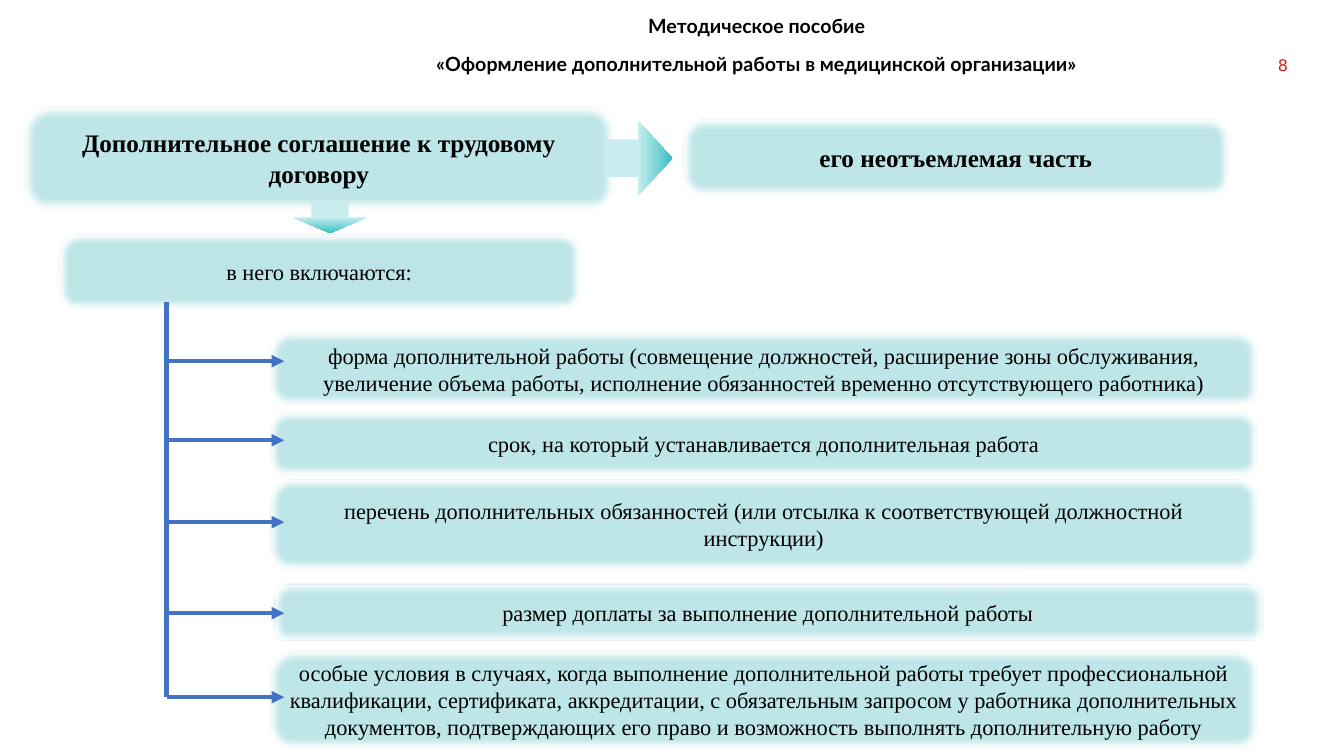
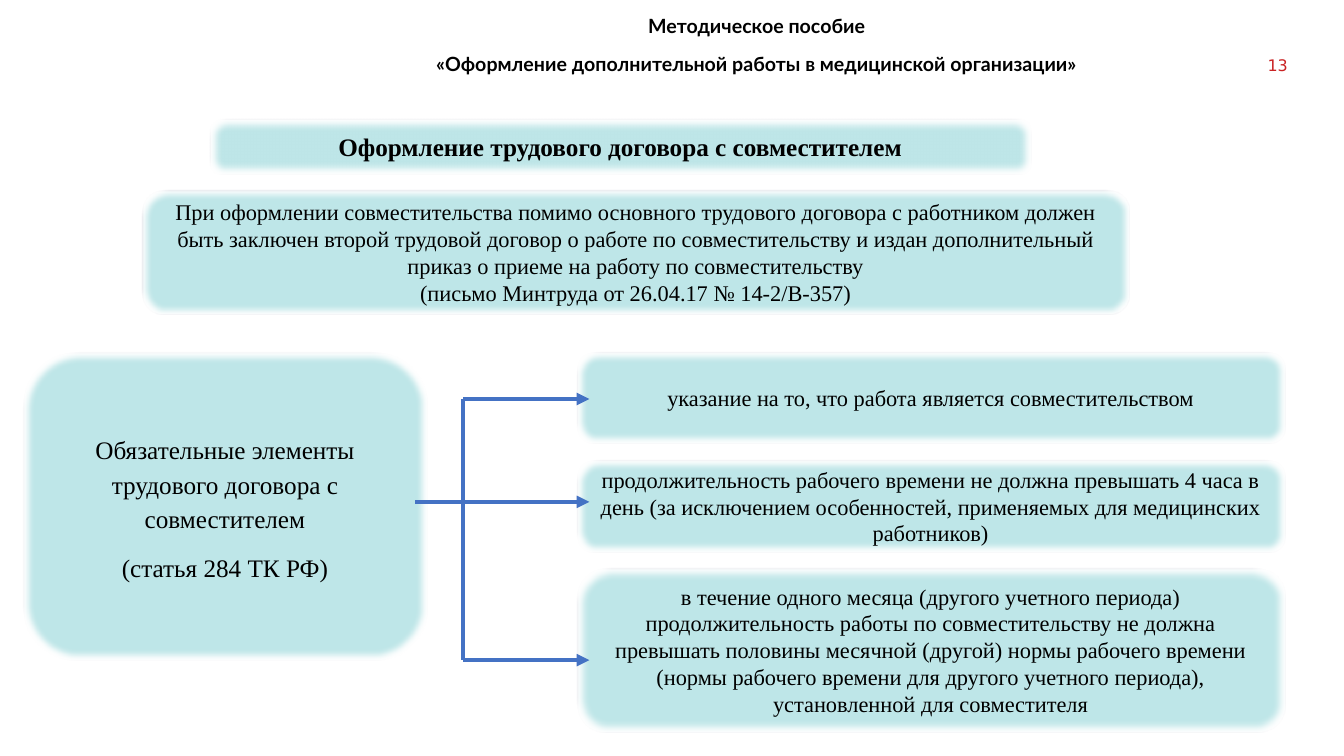
"""Build two slides on documenting additional work in a medical organization."""
from dataclasses import dataclass

from lxml.etree import SubElement
from pptx import Presentation
from pptx.dml.color import RGBColor
from pptx.enum.shapes import MSO_CONNECTOR as Connector, MSO_SHAPE as Shape
from pptx.enum.text import MSO_ANCHOR as Anchor, MSO_AUTO_SIZE as AutoSize, PP_ALIGN as Align
from pptx.oxml.ns import qn
from pptx.util import Pt


@dataclass(frozen=True)
class Theme:
    """Colours, fonts and sizes shared by the slides."""
    black: RGBColor = RGBColor.from_string("000000")
    number_red: RGBColor = RGBColor.from_string("CA2324")
    box_fill: RGBColor = RGBColor.from_string("BEE6E8")
    box_line: RGBColor = RGBColor.from_string("1E3256")
    arrow_light: RGBColor = RGBColor.from_string("C7EDEE")
    arrow_dark: RGBColor = RGBColor.from_string("3BC0C3")
    branch: RGBColor = RGBColor.from_string("4472C4")
    body_font: str = "Times New Roman"
    header_font: str = "Lato"
    number_font: str = "DejaVu Sans"
    heading_size: float = 18
    body_size: float = 16
    header_size: float = 14
    number_size: float = 11.4
    box_line_width: float = 1
    branch_width: float = 3
    soft_edge: float = 5


THEME = Theme()
HEADER = ("Методическое пособие",
          "«Оформление дополнительной работы в медицинской организации»")


def points(*values):
    """Convert numbers to lengths in points."""
    return [Pt(value) for value in values]


def write_text(shape, *lines, size=THEME.body_size, font=THEME.body_font, color=THEME.black,
               bold=False, align=Align.CENTER, anchor=Anchor.MIDDLE, spacing=None, after=0):
    """Fill a shape with one formatted paragraph per line."""
    frame = shape.text_frame
    frame.word_wrap = True
    frame.auto_size = AutoSize.NONE
    frame.vertical_anchor = anchor
    for index, line in enumerate(lines):
        paragraph = frame.add_paragraph() if index else frame.paragraphs[0]
        paragraph.alignment = align
        paragraph.line_spacing = spacing
        paragraph.space_after = Pt(after)
        run = paragraph.add_run()
        run.text = line
        run.font.size = Pt(size)
        run.font.name = font
        run.font.bold = bold
        run.font.color.rgb = color


def add_page(presentation, number):
    """Add a slide with the common header and its page number."""
    slide = presentation.slides.add_slide(presentation.slide_layouts[5])
    title = slide.shapes.title
    title.left, title.top, title.width, title.height = points(222.5, 6.5, 636, 51)
    write_text(title, *HEADER, size=THEME.header_size, font=THEME.header_font, bold=True,
               anchor=Anchor.TOP, after=10)
    page_number = slide.shapes.add_textbox(*points(898, 39.5, 22, 17.5))
    frame = page_number.text_frame
    frame.margin_left = frame.margin_right = frame.margin_top = frame.margin_bottom = 0
    write_text(page_number, str(number), size=THEME.number_size, font=THEME.number_font,
               color=THEME.number_red, align=Align.RIGHT, anchor=Anchor.TOP)
    return slide


def add_box(slide, bounds, *lines, **text_format):
    """Add a rounded box with soft edges and text."""
    box = slide.shapes.add_shape(Shape.ROUNDED_RECTANGLE, *points(*bounds))
    box.fill.solid()
    box.fill.fore_color.rgb = THEME.box_fill
    box.line.color.rgb = THEME.box_line
    box.line.width = Pt(THEME.box_line_width)
    box.shadow.inherit = False
    effects = box._element.spPr.find(qn("a:effectLst"))
    SubElement(effects, qn("a:softEdge"), rad=str(Pt(THEME.soft_edge)))
    write_text(box, *lines, **text_format)


def add_block_arrow(slide, bounds, rotation=0):
    """Add a block arrow that darkens towards its tip."""
    arrow = slide.shapes.add_shape(Shape.DOWN_ARROW, *points(*bounds))
    arrow.rotation = rotation
    arrow.fill.gradient()
    arrow.fill.gradient_angle = 270
    stops = ((0.5, THEME.arrow_light), (1, THEME.arrow_dark))
    for stop, (position, color) in zip(arrow.fill.gradient_stops, stops):
        stop.position = position
        stop.color.rgb = color
    arrow.line.fill.background()
    arrow.shadow.inherit = False


def add_line(slide, start, end, arrowhead=False):
    """Add a straight line, with an arrowhead at its end if wanted."""
    line = slide.shapes.add_connector(Connector.STRAIGHT, *points(*start, *end))
    line.line.color.rgb = THEME.branch
    line.line.width = Pt(THEME.branch_width)
    if arrowhead:
        SubElement(line.line._get_or_add_ln(), qn("a:tailEnd"), type="triangle")
    SubElement(line._element.spPr, qn("a:effectLst"))


def add_branches(slide, trunk_x, tip_x, trunk_top, heights):
    """Add a vertical trunk with an arrow at each height."""
    add_line(slide, (trunk_x, trunk_top), (trunk_x, heights[-1]))
    for height in heights:
        add_line(slide, (trunk_x, height), (tip_x, height), arrowhead=True)


def build_agreement_slide(presentation):
    """Show what the supplementary agreement includes."""
    slide = add_page(presentation, 8)
    heading = {"size": THEME.heading_size, "bold": True}
    add_box(slide, (17.5, 76.5, 420.5, 72.5),
            "Дополнительное соглашение к трудовому договору", **heading)
    add_block_arrow(slide, (429, 88.5, 53.5, 49), rotation=270)
    add_box(slide, (488, 85.5, 389.5, 53.5), "его неотъемлемая часть", **heading)
    add_box(slide, (42, 167, 372, 53.5), "в него включаются:")
    add_block_arrow(slide, (209, 144, 53.5, 22.5))
    terms = (
        (193, 237.5, 52, "форма дополнительной работы (совмещение должностей, расширение зоны "
         "обслуживания, увеличение объема работы, исполнение обязанностей временно "
         "отсутствующего работника)"),
        (193, 294.5, 44.5, "срок, на который устанавливается дополнительная работа"),
        (193, 342.5, 64, "перечень дополнительных обязанностей (или отсылка к "
         "соответствующей должностной инструкции)"),
        (196, 417.5, 39.5, "размер доплаты за выполнение дополнительной работы"),
        (193, 465, 69, "особые условия в случаях, когда выполнение дополнительной работы "
         "требует профессиональной квалификации, сертификата, аккредитации, с обязательным "
         "запросом у работника дополнительных документов, подтверждающих его право и "
         "возможность выполнять дополнительную работу"),
    )
    for left, top, height, text in terms:
        add_box(slide, (left, top, 705, height), text)
    add_branches(slide, 119, 203, 216, (258, 314.5, 373, 438, 498))


def build_contract_slide(presentation):
    """Show the mandatory elements of a part-time contract."""
    slide = add_page(presentation, 13)
    add_box(slide, (150, 85, 586, 39.5), "Оформление трудового договора с совместителем",
            size=THEME.heading_size, bold=True)
    add_box(slide, (101.5, 136, 705, 88.5),
            "При оформлении совместительства помимо основного трудового договора с работником "
            "должен быть заключен второй трудовой договор о работе по совместительству и издан "
            "дополнительный приказ о приеме на работу по совместительству",
            "(письмо Минтруда от 26.04.17 № 14-2/В-357)")
    add_box(slide, (16.5, 251.5, 288.5, 220),
            "Обязательные элементы трудового договора с совместителем",
            "(статья 284 ТК РФ)", size=THEME.heading_size, spacing=1.15, after=10)
    elements = (
        (251.5, 65, "указание на то, что работа является совместительством"),
        (329, 65, "продолжительность рабочего времени не должна превышать 4 часа в день "
         "(за исключением особенностей, применяемых для медицинских работников)"),
        (406, 116.5, "в течение одного месяца (другого учетного периода) продолжительность "
         "работы по совместительству не должна превышать половины месячной (другой) нормы "
         "рабочего времени (нормы рабочего времени для другого учетного периода), "
         "установленной для совместителя"),
    )
    for top, height, text in elements:
        add_box(slide, (412, top, 505.5, height), text)
    heights = (285, 358.5, 471.5)
    add_line(slide, (296.5, heights[1]), (331, heights[1]))
    add_branches(slide, 331, 421, heights[0], heights)


def main():
    """Build and save the presentation."""
    presentation = Presentation()
    presentation.slide_width, presentation.slide_height = points(960, 540)
    build_agreement_slide(presentation)
    build_contract_slide(presentation)
    presentation.save("out.pptx")


if __name__ == "__main__":
    main()
